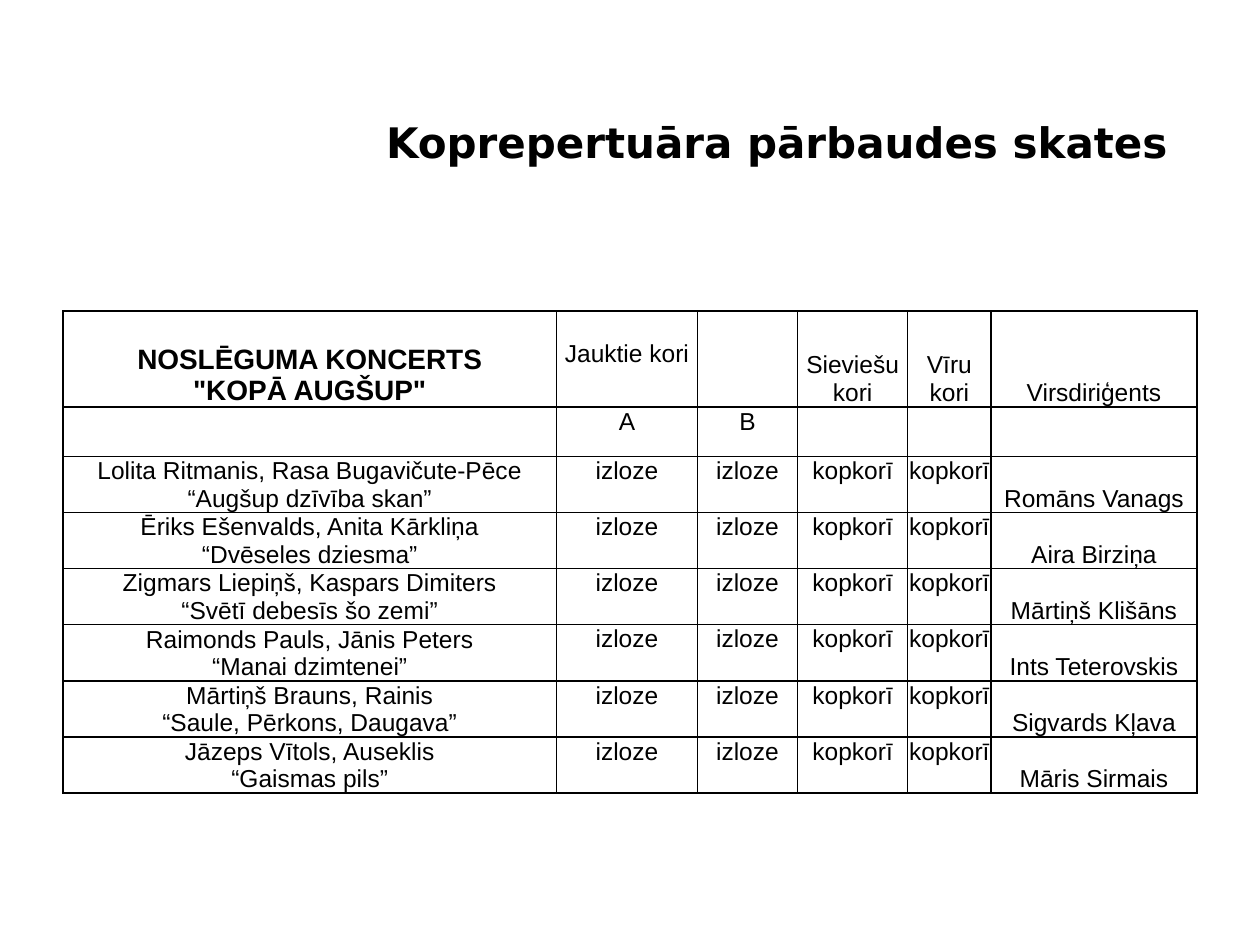
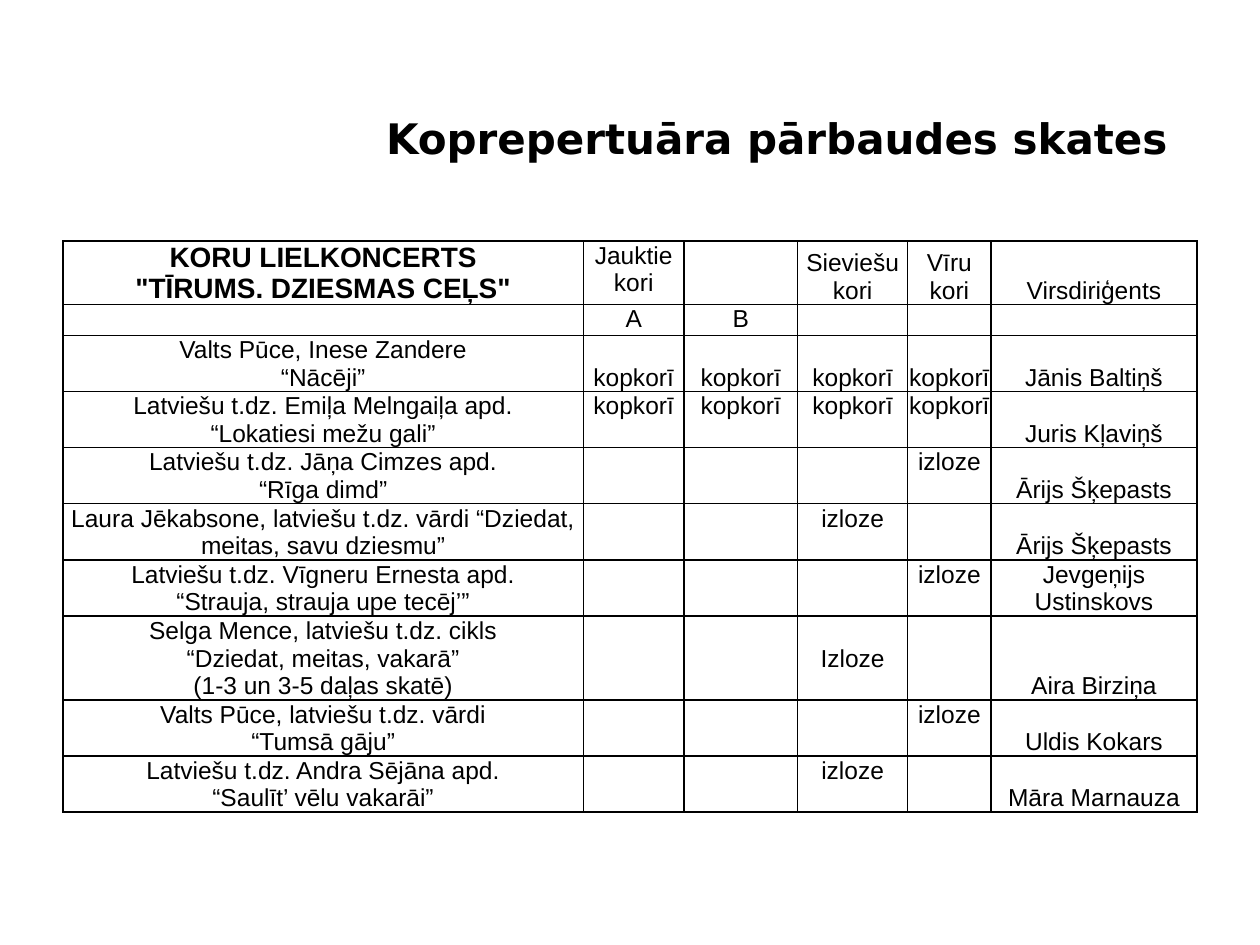
from dataclasses import dataclass

from lxml import etree
from pptx import Presentation
from pptx.dml.color import RGBColor
from pptx.enum.text import MSO_ANCHOR, PP_ALIGN
from pptx.oxml.ns import qn
from pptx.util import Cm, Pt

TOP, MID, LOW = MSO_ANCHOR.TOP, MSO_ANCHOR.MIDDLE, MSO_ANCHOR.BOTTOM
CENTER = PP_ALIGN.CENTER
BLACK, WHITE = "000000", "FFFFFF"
TITLE = "Koprepertuāra pārbaudes skates"
LEFT, INSET, LINE = 1.27, 0.02, 0.57
TALL = 1.12
DRAW, JOINT = "izloze", "kopkorī"


@dataclass(frozen=True)
class Cell:
    text: str = ""
    anchor: int = TOP
    drop: float = 0
    size: int = 14
    bold: bool = False


@dataclass(frozen=True)
class Song:
    name: str
    marks: tuple[str, str, str, str]
    lead: str
    anchor: int = TOP
    drop: float = 0
    height: float = TALL

    def cells(self) -> list[Cell]:
        marks = [Cell(mark, self.anchor, self.drop) for mark in self.marks]
        return [Cell(self.name, LOW), *marks, Cell(self.lead, LOW)]


@dataclass(frozen=True)
class Page:
    concert: str
    title_top: float
    top: float
    widths: tuple[float, ...]
    heads: tuple[float, float]
    drop: float
    songs: list[Song]

    def rows(self) -> list[list[Cell]]:
        head = [Cell(self.concert, LOW, size=16, bold=True),
                Cell("Jauktie kori", drop=self.drop), Cell()]
        head += [Cell(text, LOW)
                 for text in ("Sieviešu kori", "Vīru kori", "Virsdiriģents")]
        parts = [Cell(text) for text in ("", "A", "B", "", "", "")]
        return [head, parts, *(song.cells() for song in self.songs)]

    def heights(self) -> list[float]:
        return [*self.heads, *(song.height for song in self.songs)]


MIXED = (DRAW, DRAW, JOINT, JOINT)
ALL = (JOINT,) * 4
MEN = ("", "", "", DRAW)
WOMEN = ("", "", DRAW, "")

PAGES = [
    Page("NOSLĒGUMA KONCERTS\n\"KOPĀ AUGŠUP\"", 1.14, 6.27,
         (9.95, 2.84, 2.02, 2.22, 1.68, 4.15), (1.93, 1.0), LINE, [
             Song("Lolita Ritmanis, Rasa Bugavičute-Pēce\n“Augšup dzīvība skan”",
                  MIXED, "Romāns Vanags"),
             Song("Ēriks Ešenvalds, Anita Kārkliņa\n“Dvēseles dziesma”",
                  MIXED, "Aira Birziņa"),
             Song("Zigmars Liepiņš, Kaspars Dimiters\n“Svētī debesīs šo zemi”",
                  MIXED, "Mārtiņš Klišāns"),
             Song("Raimonds Pauls, Jānis Peters\n“Manai dzimtenei”",
                  MIXED, "Ints Teterovskis"),
             Song("Mārtiņš Brauns, Rainis\n“Saule, Pērkons, Daugava”",
                  MIXED, "Sigvards Kļava"),
             Song("Jāzeps Vītols, Auseklis\n“Gaismas pils”",
                  MIXED, "Māris Sirmais"),
         ]),
    Page("KORU LIELKONCERTS\n\"TĪRUMS. DZIESMAS CEĻS\"", 1.06, 4.86,
         (10.49, 2.03, 2.29, 2.22, 1.68, 4.15), (1.28, 0.57), 0, [
             Song("Valts Pūce, Inese Zandere\n“Nācēji”",
                  ALL, "Jānis Baltiņš", LOW),
             Song("Latviešu t.dz. Emiļa Melngaiļa apd.\n“Lokatiesi mežu gali”",
                  ALL, "Juris Kļaviņš"),
             Song("Latviešu t.dz. Jāņa Cimzes apd.\n“Rīga dimd”",
                  MEN, "Ārijs Šķepasts"),
             Song("Laura Jēkabsone, latviešu t.dz. vārdi “Dziedat, meitas, savu dziesmu”",
                  WOMEN, "Ārijs Šķepasts"),
             Song("Latviešu t.dz. Vīgneru Ernesta apd.\n“Strauja, strauja upe tecēj’”",
                  MEN, "Jevgeņijs Ustinskovs"),
             Song("Selga Mence, latviešu t.dz. cikls\n“Dziedat, meitas, vakarā”\n"
                  "(1-3 un 3-5 daļas skatē)",
                  ("", "", "Izloze", ""), "Aira Birziņa", drop=LINE, height=1.69),
             Song("Valts Pūce, latviešu t.dz. vārdi\n“Tumsā gāju”",
                  MEN, "Uldis Kokars"),
             Song("Latviešu t.dz. Andra Sējāna apd.\n“Saulīt’ vēlu vakarāi”",
                  WOMEN, "Māra Marnauza"),
         ]),
]


def color(code: str) -> RGBColor:
    return RGBColor.from_string(code)


def write(para, text: str, face: str, size: int, bold: bool) -> None:
    para.alignment = CENTER
    run = para.add_run()
    run.text = text
    run.font.name = face
    run.font.size = Pt(size)
    run.font.bold = bold
    run.font.color.rgb = color(BLACK)


def frame(box) -> None:
    props = box._tc.get_or_add_tcPr()
    for side in "LRTB":
        line = etree.SubElement(props, qn(f"a:ln{side}"), w=str(Pt(1)))
        fill = etree.SubElement(line, qn("a:solidFill"))
        etree.SubElement(fill, qn("a:srgbClr"), val=BLACK)


def draw_cell(box, cell: Cell) -> None:
    frame(box)
    box.fill.solid()
    box.fill.fore_color.rgb = color(WHITE)
    box.margin_left = box.margin_right = Cm(INSET)
    box.margin_top, box.margin_bottom = Cm(INSET + cell.drop), 0
    box.vertical_anchor = cell.anchor
    body = box.text_frame
    if not cell.text:
        etree.SubElement(body.paragraphs[0]._p, qn("a:endParaRPr"),
                         sz=str(cell.size * 100))
        return
    for num, text in enumerate(cell.text.split("\n")):
        para = body.add_paragraph() if num else body.paragraphs[0]
        write(para, text, "Arial", cell.size, cell.bold)


def draw_title(slide, top: float) -> None:
    title = slide.shapes.title
    title.left, title.top = Cm(7.19), Cm(top)
    title.width, title.height = Cm(16.94), Cm(3.28)
    body = title.text_frame
    body.word_wrap = True
    body.vertical_anchor = MID
    body.margin_left = body.margin_right = body.margin_bottom = Cm(0.13)
    body.margin_top = Cm(0.3)
    write(body.paragraphs[0], TITLE, "DejaVu Sans", 24, True)


def draw_table(slide, page: Page) -> None:
    rows, tall = page.rows(), page.heights()
    grid = slide.shapes.add_table(
        len(rows), len(page.widths), Cm(LEFT), Cm(page.top),
        Cm(sum(page.widths)), Cm(sum(tall))).table
    grid.first_row = grid.horz_banding = False
    for col, width in zip(grid.columns, page.widths):
        col.width = Cm(width)
    for line, height, cells in zip(grid.rows, tall, rows):
        line.height = Cm(height)
        for box, cell in zip(line.cells, cells):
            draw_cell(box, cell)


def main() -> None:
    deck = Presentation()
    deck.slide_width, deck.slide_height = Cm(25.4), Cm(19.05)
    for page in PAGES:
        slide = deck.slides.add_slide(deck.slide_layouts[5])
        draw_title(slide, page.title_top)
        draw_table(slide, page)
    deck.save("out.pptx")


if __name__ == "__main__":
    main()
